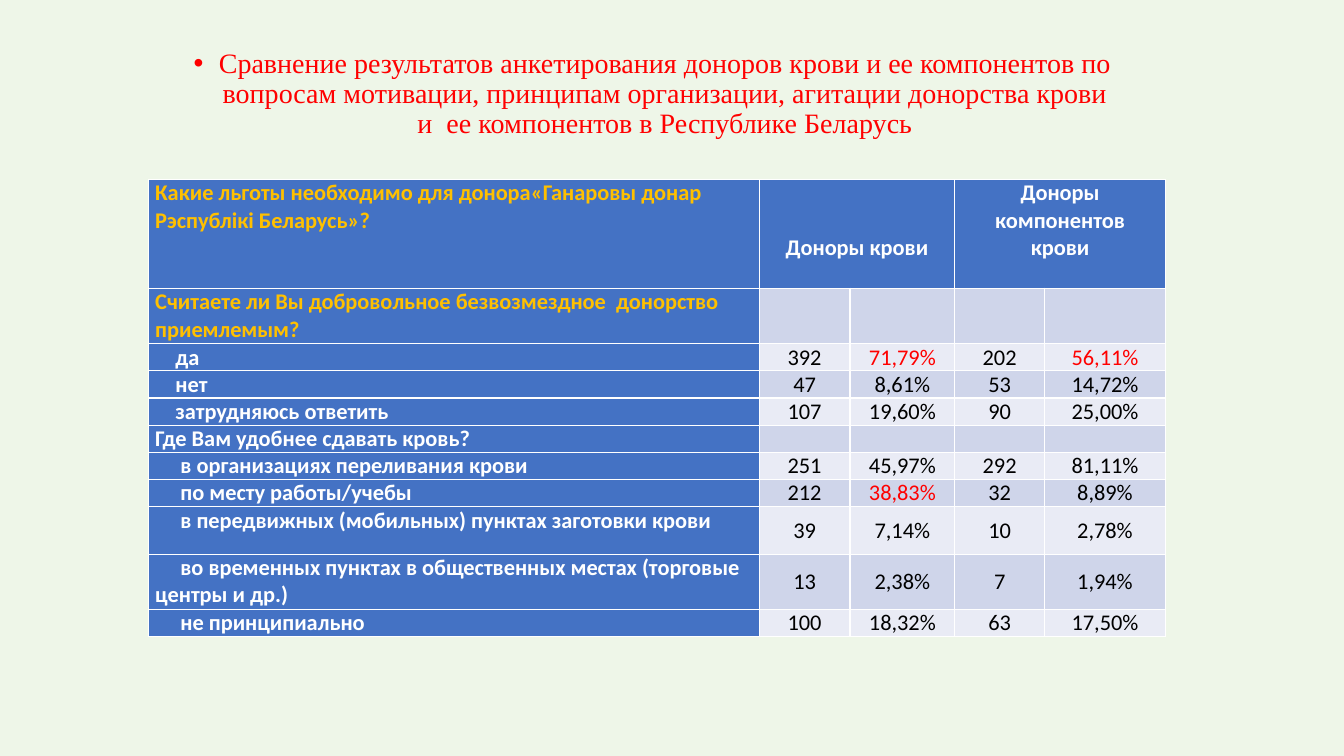
from dataclasses import dataclass

from lxml.etree import SubElement
from pptx import Presentation
from pptx.dml.color import RGBColor as RGB
from pptx.enum.text import MSO_ANCHOR as Anchor, PP_ALIGN as Align
from pptx.oxml.ns import qn
from pptx.util import Inches, Pt


@dataclass(frozen=True)
class Theme:
    page: str = "EEF6E8"
    head: str = "4472C4"
    bands: tuple = ("CFD5EA", "E9EBF5")
    white: str = "FFFFFF"
    black: str = "000000"
    gold: str = "FFC000"
    red: str = "FF0000"
    serif: str = "Times New Roman"
    sans: str = "Calibri"
    title: int = 20
    body: int = 16


THEME = Theme()
TITLE = ("Сравнение результатов анкетирования доноров крови и ее компонентов "
         "по вопросам мотивации, принципам организации, агитации донорства "
         "крови и  ее компонентов в Республике Беларусь")
TOPIC = "Какие льготы необходимо для донора«Ганаровы донар Рэспублiкi Беларусь»?"
WIDTHS = (6.06, 0.9, 1.04, 0.89, 1.2)
TOP = 1.08
BLANK = ("",) * 4
# Row height, first-line indent, label, values
ROWS = (
    (0.55, 0, "Считаете ли Вы добровольное безвозмездное  донорство  приемлемым?", BLANK),
    (0.27, 0.2, "да", ("392", "71,79%", "202", "56,11%")),
    (0.27, 0.2, "нет", ("47", "8,61%", "53", "14,72%")),
    (0.27, 0.2, "затрудняюсь ответить", ("107", "19,60%", "90", "25,00%")),
    (0.27, 0, "Где Вам удобнее сдавать кровь?", BLANK),
    (0.27, 0.25, "в организациях переливания крови", ("251", "45,97%", "292", "81,11%")),
    (0.27, 0.25, "по месту работы/учебы", ("212", "38,83%", "32", "8,89%")),
    (0.47, 0.25, "в передвижных (мобильных) пунктах заготовки крови",
     ("39", "7,14%", "10", "2,78%")),
    (0.55, 0.25, "во временных пунктах в общественных местах (торговые центры и др.)",
     ("13", "2,38%", "7", "1,94%")),
    (0.27, 0.25, "не принципиально", ("100", "18,32%", "63", "17,50%")),
)
GOLD_ROW = 1
RED = {"71,79%", "56,11%", "38,83%"}


def style(para, size, face, color, bold=False):
    font = para.font
    font.size, font.name, font.bold = Pt(size), face, bold
    font.color.rgb = RGB.from_string(color)


def indent(para, left, first):
    props = para._p.get_or_add_pPr()
    props.set("marL", str(Inches(left)))
    props.set("indent", str(Inches(first)))
    return props


def add_title(slide):
    box = slide.shapes.add_textbox(Inches(1.78), Inches(0.44), Inches(9.38), Inches(1.1))
    box.text_frame.word_wrap = True
    para = box.text_frame.paragraphs[0]
    para.text = TITLE
    para.alignment = Align.CENTER
    para.line_spacing = 0.9
    props = indent(para, 0.25, -0.25)
    SubElement(props, qn("a:buFont"), typeface="Arial")
    SubElement(props, qn("a:buChar"), char="•")
    style(para, THEME.title, THEME.serif, THEME.red)


def fill_cell(cell, text, fill, color, bold=False, mid=False, pads=(0.07, 0, 0)):
    """Write one cell; pads are the side, top and bottom insets."""
    side, top, base = pads
    cell.margin_left = cell.margin_right = Inches(side)
    cell.margin_top, cell.margin_bottom = Inches(top), Inches(base)
    cell.vertical_anchor = Anchor.MIDDLE if mid else Anchor.TOP
    cell.fill.solid()
    cell.fill.fore_color.rgb = RGB.from_string(fill)
    para = cell.text_frame.paragraphs[0]
    if text:
        para.text = text
    para.alignment = Align.CENTER if mid else Align.LEFT
    style(para, THEME.body, THEME.sans, color, bold)
    return para


def add_head(table):
    fill_cell(table.cell(0, 0), TOPIC, THEME.head, THEME.gold, True)
    groups = ((1, "Доноры крови", (0.07, 0.27, 0)),
              (3, "Доноры компонентов крови", (0.12, 0, 0.27)))
    for col, text, pads in groups:
        cell = table.cell(0, col)
        cell.merge(table.cell(0, col + 1))
        fill_cell(cell, text, THEME.head, THEME.white, True, True, pads)


def add_row(table, row, first, label, values):
    color = THEME.gold if row == GOLD_ROW else THEME.white
    para = fill_cell(table.cell(row, 0), label, THEME.head, color, True)
    indent(para, 0, first)
    band = THEME.bands[(row - 1) % 2]
    for col, text in enumerate(values, 1):
        color = THEME.red if text in RED else THEME.black
        fill_cell(table.cell(row, col), text, band, color, mid=True)


def add_survey(slide):
    highs = [TOP] + [row[0] for row in ROWS]
    frame = slide.shapes.add_table(len(highs), len(WIDTHS), Inches(1.47), Inches(1.78),
                                   Inches(sum(WIDTHS)), Inches(sum(highs)))
    table = frame.table
    for col, width in zip(table.columns, WIDTHS):
        col.width = Inches(width)
    for row, high in zip(table.rows, highs):
        row.height = Inches(high)
    add_head(table)
    for row, (_, first, label, values) in enumerate(ROWS, 1):
        add_row(table, row, first, label, values)


def main():
    deck = Presentation()
    deck.slide_width, deck.slide_height = Inches(13.33), Inches(7.5)
    slide = deck.slides.add_slide(deck.slide_layouts[6])
    back = slide.background.fill
    back.solid()
    back.fore_color.rgb = RGB.from_string(THEME.page)
    add_title(slide)
    add_survey(slide)
    deck.save("out.pptx")


if __name__ == "__main__":
    main()
